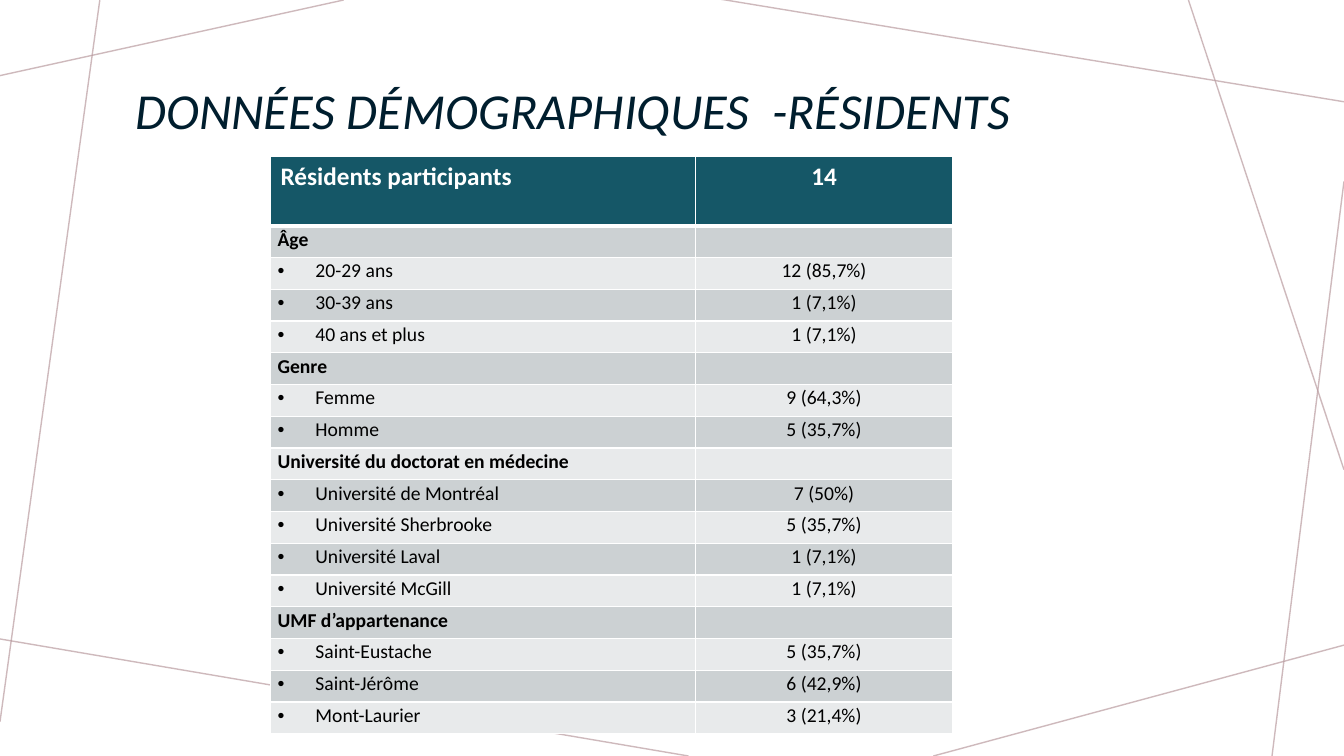
from lxml import etree
from pptx import Presentation
from pptx import util as u
from pptx.dml.color import RGBColor
from pptx.enum import shapes, text
from pptx.oxml import ns

INK = {"title": "001E2E", "line": "BA9CA0", "head": "155767", "dark": "CCD1D3",
       "light": "E8EAEB", "white": "FFFFFF", "black": "000000"}
EDGES = [(245.5, 0, 0, 54), (71.3, 0, 0, 515.5), (491.8, 540, -3.6, 455.8),
         (960, 460.8, 666.7, 540), (960, 129.6, 908.6, 540),
         (960, 335.5, 848.9, 0), (960, 72.7, 514.1, -0.7)]
HEAD = ("Résidents participants", "14")
GROUPS = {
    "Âge": [("20-29 ans", "12 (85,7%)"), ("30-39 ans", "1 (7,1%)"),
            ("40 ans et plus", "1 (7,1%)")],
    "Genre": [("Femme", "9 (64,3%)"), ("Homme", "5 (35,7%)")],
    "Université du doctorat en médecine": [
        ("Université de Montréal", "7 (50%)"), ("Université Sherbrooke", "5 (35,7%)"),
        ("Université Laval", "1 (7,1%)"), ("Université McGill", "1 (7,1%)")],
    "UMF d’appartenance": [("Saint-Eustache", "5 (35,7%)"),
                           ("Saint-Jérôme", "6 (42,9%)"), ("Mont-Laurier", "3 (21,4%)")],
}


def rgb(name):
    return RGBColor.from_string(INK[name])


def sub(node, tag, **attrs):
    return etree.SubElement(node, ns.qn(tag), **attrs)


class Deck:
    face = "Calibri"

    def __init__(self):
        self.prs = Presentation()
        self.prs.slide_width, self.prs.slide_height = u.Pt(960), u.Pt(540)
        self.slide = self.prs.slides.add_slide(self.prs.slide_layouts[5])

    def font(self, para, size, ink, bold=False, italic=False):
        font = para.font
        font.name, font.size, font.bold, font.italic = self.face, u.Pt(size), bold, italic
        font.color.rgb = rgb(ink)

    def line(self, *ends):
        line = self.slide.shapes.add_connector(
            shapes.MSO_CONNECTOR.STRAIGHT, *[u.Pt(end) for end in ends])
        line.line.width = u.Pt(1)
        line.line.color.rgb = rgb("line")
        props = line._element.spPr
        sub(props.find(".//" + ns.qn("a:srgbClr")), "a:alpha", val="70000")
        sub(props, "a:effectLst")

    def title(self, words, left, top, width, height):
        box = self.slide.shapes.title
        box.left, box.top, box.width, box.height = map(u.Pt, (left, top, width, height))
        frame = box.text_frame
        frame.text = words
        frame.word_wrap = True
        frame.vertical_anchor = text.MSO_ANCHOR.MIDDLE
        para = frame.paragraphs[0]
        para.alignment, para.line_spacing = text.PP_ALIGN.LEFT, 0.9
        self.font(para, 36, "title", italic=True)

    def border(self, cell, low):
        """Draw white cell edges, the bottom one low points wide."""
        props = cell._tc.get_or_add_tcPr()
        for side, width in zip("LRTB", (1, 1, 1, low)):
            edge = sub(props, "a:ln" + side, w=str(u.Pt(width)))
            sub(sub(edge, "a:solidFill"), "a:srgbClr", val=INK["white"])

    def cell(self, cell, words, fill, head=False, bold=False, bullet=False, center=False):
        self.border(cell, 3 if head else 1)
        cell.fill.solid()
        cell.fill.fore_color.rgb = rgb(fill)
        cell.text = words
        para = cell.text_frame.paragraphs[0]
        if center:
            para.alignment = text.PP_ALIGN.CENTER
        if not head:
            cell.margin_left = cell.margin_right = u.Pt(5)
            cell.margin_top = cell.margin_bottom = 0
            para.line_spacing, para.space_after = 1.07, u.Pt(8)
        if bullet:
            props = para._p.get_or_add_pPr()
            props.set("marL", str(u.Pt(27)))
            props.set("indent", str(u.Pt(-27)))
            sub(props, "a:buFont", typeface="Arial")
            sub(props, "a:buChar", char="•")
        self.font(para, 18 if head else 14, "white" if head else "black", bold)

    def table(self, head, groups, left, top, widths, tall, step):
        rows = []
        for group, items in groups.items():
            rows += [(group, "", True)] + [(*item, False) for item in items]
        grid = self.slide.shapes.add_table(
            len(rows) + 1, len(widths), u.Pt(left), u.Pt(top),
            u.Pt(sum(widths)), u.Pt(tall + step * len(rows))).table
        for col, width in zip(grid.columns, widths):
            col.width = u.Pt(width)
        for row in grid.rows:
            row.height = u.Pt(step)
        grid.rows[0].height = u.Pt(tall)
        for col, words in enumerate(head):
            self.cell(grid.cell(0, col), words, "head", head=True, bold=True,
                      center=col == 1)
        for row, (name, count, bold) in enumerate(rows, 1):
            fill = "dark" if row % 2 else "light"
            self.cell(grid.cell(row, 0), name, fill, bold=bold, bullet=not bold)
            self.cell(grid.cell(row, 1), count, fill, center=True)


def main():
    deck = Deck()
    for ends in EDGES:
        deck.line(*ends)
    deck.title("DONNÉES DÉMOGRAPHIQUES  -RÉSIDENTS", 89.3, 35.3, 809.3, 90.7)
    deck.table(HEAD, GROUPS, 193.3, 111.8, (303.5, 183.7), 49.5, 22.7)
    deck.prs.save("out.pptx")


if __name__ == "__main__":
    main()
